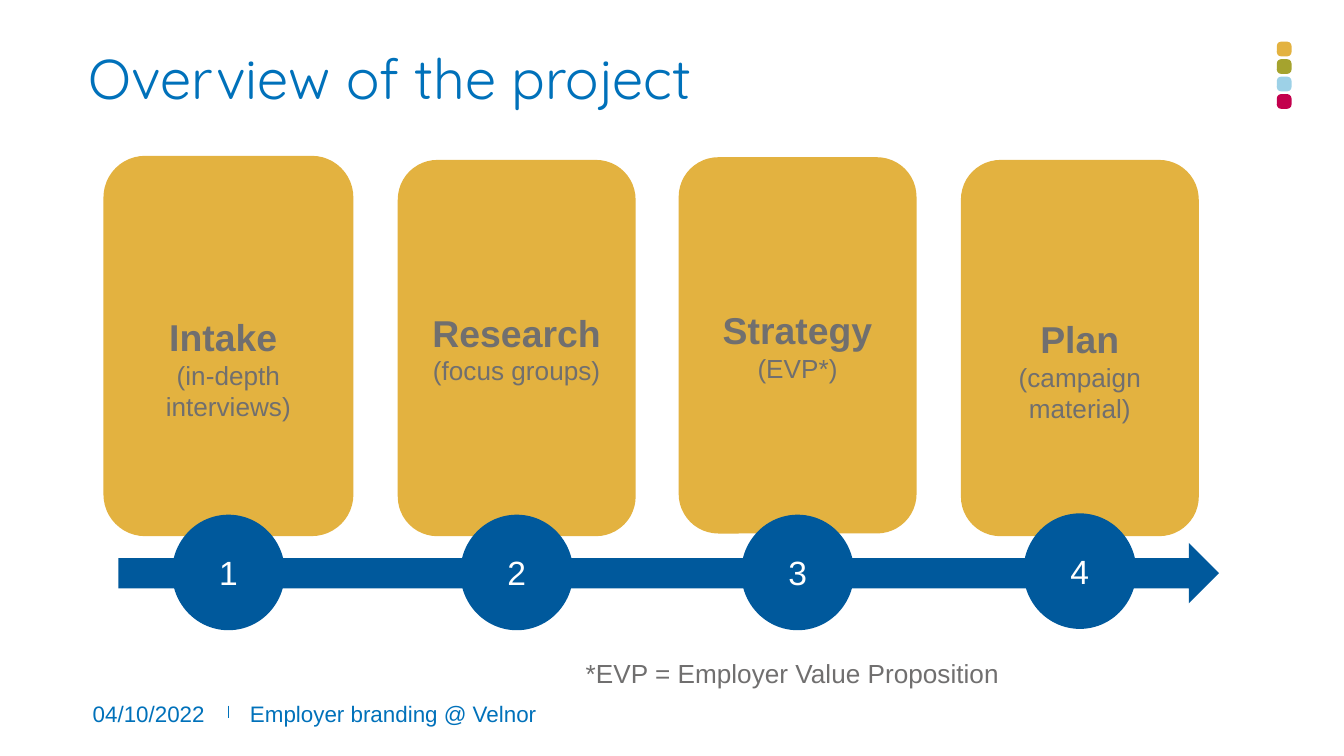
import pptx
import pptx.util
import pptx.dml.color
import pptx.enum.shapes
import pptx.enum.text
import pptx.oxml

Inches = pptx.util.Inches
SHAPE = pptx.enum.shapes.MSO_SHAPE
ALIGN = pptx.enum.text.PP_ALIGN
ANCHOR = pptx.enum.text.MSO_ANCHOR

THEME = {
    "blue": "0071BA", "navy": "00599C", "gold": "E3B240", "olive": "A5A32E",
    "sky": "9DD1E7", "red": "C3004D", "grey": "706F6F", "white": "FFFFFF",
    "title_font": "Quicksand", "body_font": "Arial",
    "title": 30, "stage": 20, "number": 18, "detail": 14, "footer": 12,
}

DOTS = ["gold", "olive", "sky", "red"]
STAGES = [
    {"name": "Intake ", "detail": "(in-depth interviews)", "card": (0.77, 1.16, 1.86, 2.83), "drop": 0.33, "circle_top": 3.83},
    {"name": "Research", "detail": "(focus groups)", "card": (2.96, 1.19, 1.77, 2.8), "drop": 0, "circle_top": 3.83},
    {"name": "Strategy", "detail": "(EVP*)", "card": (5.05, 1.17, 1.77, 2.8), "drop": 0, "circle_top": 3.83},
    {"name": "Plan", "detail": "(campaign material)", "card": (7.15, 1.19, 1.77, 2.8), "drop": 0.33, "circle_top": 3.82},
]
LABELS = [
    {"text": "Overview of the project", "at": (0.66, 0.38, 8.62, 0.77), "size": "title",
     "color": "blue", "font": "title_font", "inset": 0, "spacing": 0.9},
    {"text": "04/10/2022", "at": (0.69, 5.21, 0.94, 0.21), "size": "footer", "color": "blue", "inset": 0},
    {"text": "Employer branding @ Velnor", "at": (1.86, 5.21, 3.38, 0.21), "size": "footer", "color": "blue", "inset": 0},
    {"text": "*EVP = Employer Value Proposition", "at": (4.26, 4.84, 3.87, 0.34), "size": "detail", "color": "grey"},
]
PAGE_WIDTH = 10
PAGE_HEIGHT = PAGE_WIDTH * 9 / 16
DOT_LEFT, DOT_TOP, DOT_SIZE, DOT_STEP = 9.5, 0.31, 0.11, 0.13
CIRCLE_WIDTH, CIRCLE_HEIGHT = 0.84, 0.86


def rgb(name):
    return pptx.dml.color.RGBColor.from_string(THEME[name])


def style(para, size, color, font="body_font", bold=False):
    para.font.name = THEME[font]
    para.font.size = pptx.util.Pt(THEME[size])
    para.font.color.rgb = rgb(color)
    para.font.bold = bold


def add_shape(page, kind, at, color):
    shape = page.shapes.add_shape(kind, *map(Inches, at))
    shape.shadow.inherit = False
    shape.fill.solid()
    shape.fill.fore_color.rgb = rgb(color)
    shape.line.fill.background()
    return shape


def write_centred(shape, lines, color):
    frame = shape.text_frame
    frame.word_wrap = True
    frame.vertical_anchor = ANCHOR.MIDDLE
    for index, (text, size, bold) in enumerate(lines):
        para = frame.add_paragraph() if index else frame.paragraphs[0]
        para.text = text
        para.alignment = ALIGN.CENTER
        style(para, size, color, bold=bold)


def add_label(page, label):
    box = page.shapes.add_textbox(*map(Inches, label["at"]))
    frame = box.text_frame
    frame.word_wrap = True
    if "inset" in label:
        inset = Inches(label["inset"])
        frame.margin_left = frame.margin_right = inset
        frame.margin_top = frame.margin_bottom = inset
    para = frame.paragraphs[0]
    para.text = label["text"]
    para.line_spacing = label.get("spacing")
    style(para, label["size"], label["color"], label.get("font", "body_font"))


def add_divider(page):
    divider = page.shapes.add_connector(
        pptx.enum.shapes.MSO_CONNECTOR.STRAIGHT, *map(Inches, (1.7, 5.25, 1.7, 5.34)))
    divider.line.color.rgb = rgb("blue")
    divider.line.width = pptx.util.Pt(1)
    properties = divider._element.spPr
    properties.append(properties.makeelement(pptx.oxml.ns.qn("a:effectLst"), {}))


def add_stage(page, number, stage):
    left, _, width, _ = stage["card"]
    card = add_shape(page, SHAPE.ROUNDED_RECTANGLE, stage["card"], "gold")
    card.text_frame.margin_top = Inches(0.05 + stage["drop"])
    write_centred(card, [(stage["name"], "stage", True), (stage["detail"], "detail", False)], "grey")
    circle_left = left + (width - CIRCLE_WIDTH) / 2
    circle = add_shape(page, SHAPE.OVAL,
                       (circle_left, stage["circle_top"], CIRCLE_WIDTH, CIRCLE_HEIGHT), "navy")
    write_centred(circle, [(str(number), "number", False)], "white")


def main():
    deck = pptx.Presentation()
    deck.slide_width, deck.slide_height = Inches(PAGE_WIDTH), Inches(PAGE_HEIGHT)
    page = deck.slides.add_slide(deck.slide_layouts[6])
    add_divider(page)
    for index, color in enumerate(DOTS):
        dot = add_shape(page, SHAPE.ROUNDED_RECTANGLE,
                        (DOT_LEFT, DOT_TOP + index * DOT_STEP, DOT_SIZE, DOT_SIZE), color)
        dot.adjustments[0] = 0.3
    add_shape(page, SHAPE.RIGHT_ARROW, (0.88, 4.04, 8.19, 0.45), "navy")
    for number, stage in enumerate(STAGES, 1):
        add_stage(page, number, stage)
    for label in LABELS:
        add_label(page, label)
    deck.save("out.pptx")


if __name__ == "__main__":
    main()
